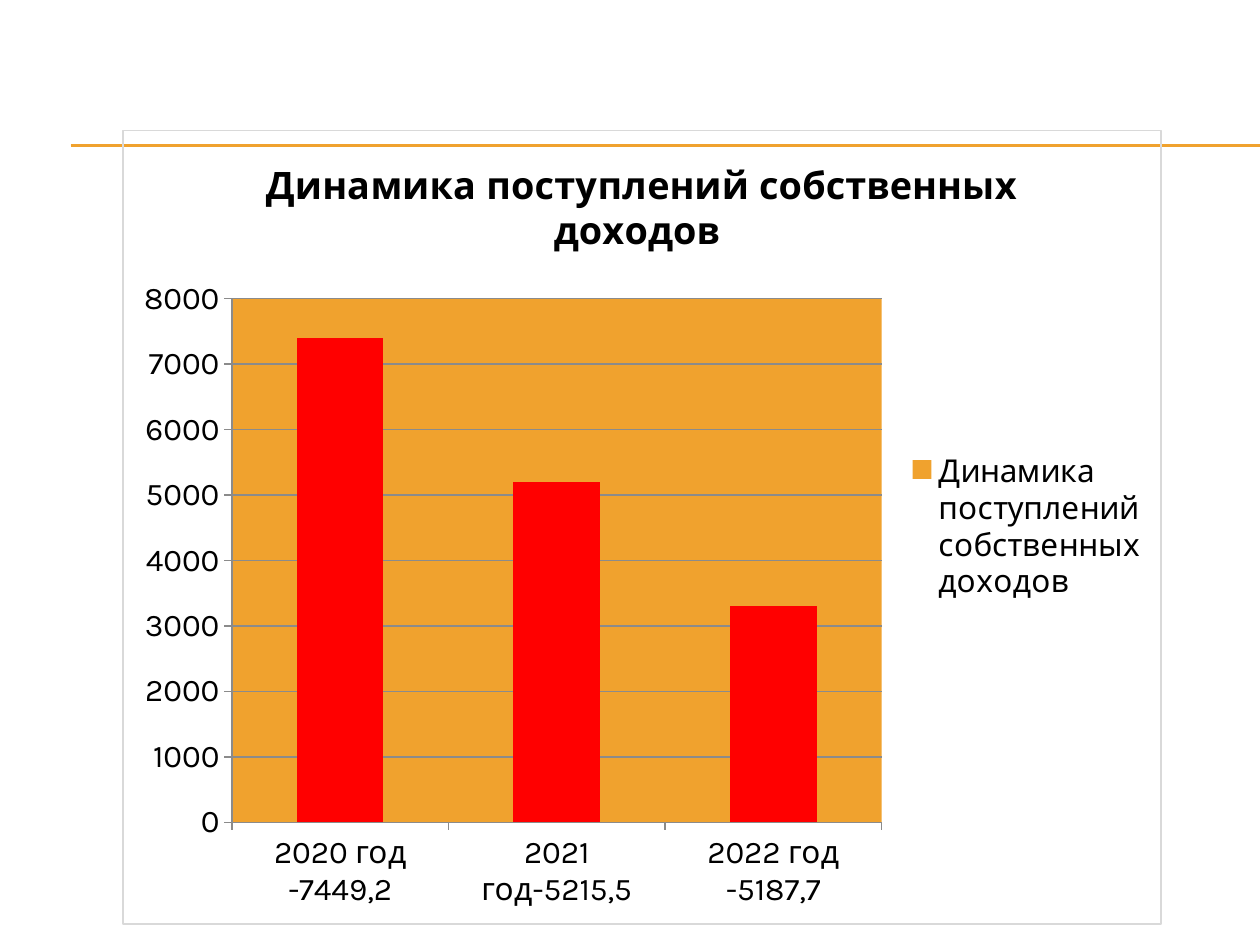
import pptx
import pptx.util
import pptx.dml.color
import pptx.chart.data
import pptx.enum.chart
import pptx.enum.shapes
import pptx.oxml
import pptx.oxml.ns
from pptx.util import Inches

HEADING = "Динамика поступлений собственных доходов "
INCOME = [
    ("2020 год -7449,2", 7400),
    ("2021 год-5215,5", 5200),
    ("2022 год -5187,7", 3300),
]
RULE_TOPS = [1.15, 1.16]
PLOT_LAYOUT = {"x": 0.105, "y": 0.212, "w": 0.626, "h": 0.66}
ORANGE, RED, GREY, PALE, BLACK = "F0A22E", "FF0000", "8B8B8B", "D9D9D9", "000000"
FONT = "Karla"


def colour(value):
    return pptx.dml.color.RGBColor.from_string(value)


def style_font(font, size, bold=False, name=FONT):
    font.name = name
    font.size = pptx.util.Pt(size)
    font.bold = bold
    font.color.rgb = colour(BLACK)


def style_line(line, value, width):
    line.color.rgb = colour(value)
    line.width = pptx.util.Pt(width)


def chart_xml(tag, content):
    return pptx.oxml.parse_xml(
        f'<c:{tag} {pptx.oxml.ns.nsdecls("c", "a")}>{content}</c:{tag}>')


def add_rule(slide, top):
    rule = slide.shapes.add_connector(
        pptx.enum.shapes.MSO_CONNECTOR.STRAIGHT,
        Inches(0.56), Inches(top), Inches(10), Inches(top))
    style_line(rule.line, ORANGE, 0.75)
    rule._element.spPr.append(pptx.oxml.parse_xml(
        f'<a:effectLst {pptx.oxml.ns.nsdecls("a")}/>'))


def add_income_chart(slide):
    data = pptx.chart.data.CategoryChartData()
    data.categories = [year for year, _ in INCOME]
    data.add_series(HEADING, [amount for _, amount in INCOME])
    chart = slide.shapes.add_chart(
        pptx.enum.chart.XL_CHART_TYPE.COLUMN_STACKED,
        Inches(0.97), Inches(1.03), Inches(8.25), Inches(6.31), data).chart
    style_font(chart.font, 10, name="Arial")

    chart.has_title = True
    heading = chart.chart_title.text_frame.paragraphs[0].add_run()
    heading.text = HEADING
    style_font(heading.font, 21.6, bold=True)
    chart.chart_title.include_in_layout = False

    chart.has_legend = True
    chart.legend.position = pptx.enum.chart.XL_LEGEND_POSITION.RIGHT
    chart.legend.include_in_layout = False
    style_font(chart.legend.font, 18)

    for axis in (chart.category_axis, chart.value_axis):
        axis.major_tick_mark = pptx.enum.chart.XL_TICK_MARK.OUTSIDE
        style_line(axis.format.line, GREY, 0.79)
        style_font(axis.tick_labels.font, 18)
    amounts = chart.value_axis
    amounts.minimum_scale, amounts.maximum_scale, amounts.major_unit = 0, 8000, 1000
    amounts.has_major_gridlines = True
    style_line(amounts.major_gridlines.format.line, GREY, 0.79)

    columns = chart.plots[0]
    columns.gap_width, columns.overlap = 150, 100
    columns.vary_by_categories = False
    income = columns.series[0]
    income.format.fill.solid()
    income.format.fill.fore_color.rgb = colour(ORANGE)
    for index in range(len(INCOME)):
        fill = income.points[index].format.fill
        fill.solid()
        fill.fore_color.rgb = colour(RED)
    format_areas(chart)


def format_areas(chart):
    space = chart._chartSpace
    plot_area = space.chart.plotArea
    for layout in plot_area.findall(pptx.oxml.ns.qn("c:layout")):
        plot_area.remove(layout)
    modes = '<c:layoutTarget val="inner"/><c:xMode val="edge"/><c:yMode val="edge"/>'
    sizes = "".join(f'<c:{side} val="{share}"/>' for side, share in PLOT_LAYOUT.items())
    plot_area.insert(0, chart_xml(
        "layout", f"<c:manualLayout>{modes}{sizes}</c:manualLayout>"))
    plot_area.append(chart_xml(
        "spPr", f'<a:solidFill><a:srgbClr val="{ORANGE}"/></a:solidFill>'))
    space.chart.addnext(chart_xml(
        "spPr", f'<a:noFill/><a:ln w="{pptx.util.Pt(0.75)}"><a:solidFill>'
        f'<a:srgbClr val="{PALE}"/></a:solidFill></a:ln>'))


def main():
    deck = pptx.Presentation()
    deck.slide_width, deck.slide_height = Inches(10), Inches(7.5)
    slide = deck.slides.add_slide(deck.slide_layouts[6])
    for top in RULE_TOPS:
        add_rule(slide, top)
    add_income_chart(slide)
    deck.save("out.pptx")


if __name__ == "__main__":
    main()
